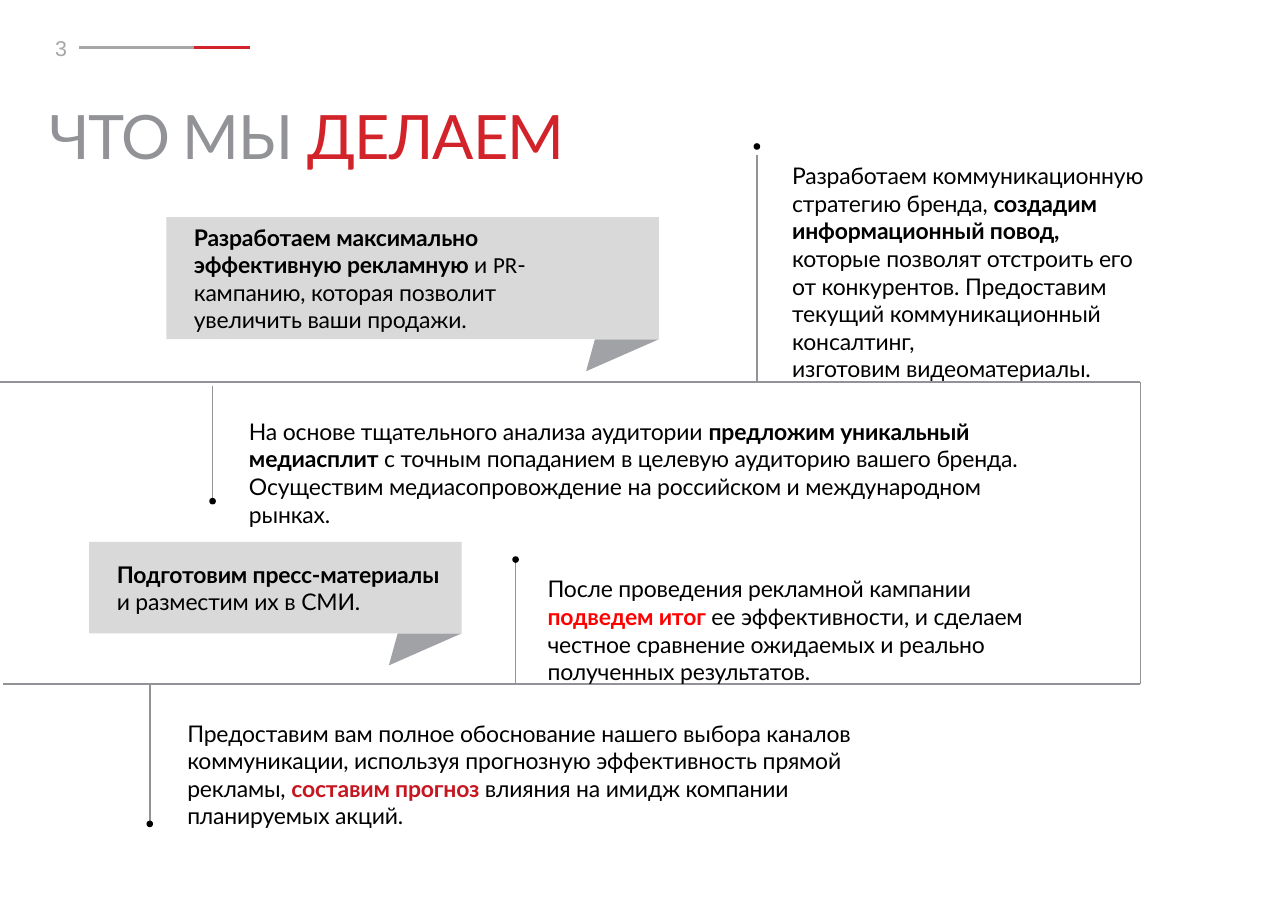
"""Builds the agency services slide: callouts, a framed route and dotted stems."""
from lxml import etree
from pptx import Presentation
from pptx.dml.color import RGBColor
from pptx.enum.shapes import MSO_CONNECTOR, MSO_SHAPE
from pptx.enum.text import MSO_ANCHOR
from pptx.oxml.ns import qn
from pptx.util import Inches, Pt

STRAIGHT = MSO_CONNECTOR.STRAIGHT
RECTANGLE, OVAL = MSO_SHAPE.RECTANGLE, MSO_SHAPE.OVAL
MIDDLE = MSO_ANCHOR.MIDDLE

BLACK = RGBColor(0x00, 0x00, 0x00)
GREY = RGBColor(0x91, 0x93, 0x96)
LIGHT_GREY = RGBColor(0xA6, 0xA6, 0xA6)
CALLOUT_GREY = RGBColor(0xD9, 0xD9, 0xD9)
TAIL_GREY = RGBColor(0xA0, 0xA2, 0xA5)
RED = RGBColor(0xD2, 0x23, 0x2A)
DARK_RED = RGBColor(0xC6, 0x16, 0x20)
BRIGHT_RED = RGBColor(0xFF, 0x00, 0x00)

BREAK = "\v"
BODY_SIZE, BODY_SPACING = 15, -0.1
DOT = 0.06

PAGE_NUMBER = [[("3", {"color": LIGHT_GREY, "font": "Arial"})]]
TITLE = [[("ЧТО МЫ ", {"color": GREY, "spacing": -0.95}),
          ("ДЕЛАЕМ", {"color": RED, "spacing": -0.5})]]

SERVICES = [
    ((7.19, 1.47, 3.35, 2.02), [
        [("Разработаем коммуникационную стратегию бренда, ", {}),
         ("создадим информационный повод,", {"bold": True}),
         (BREAK, {}),
         ("которые позволят отстроить его от конкурентов. Предоставим "
          "текущий коммуникационный консалтинг,", {})],
        [("изготовим видеоматериалы.", {})]]),
    ((2.26, 3.79, 7.25, 1.01), [
        [("На основе тщательного анализа аудитории ", {}),
         ("предложим уникальный медиасплит ", {"bold": True}),
         ("с точным попаданием в целевую аудиторию вашего бренда.", {})],
        [("Осуществим медиасопровождение на российском и международном "
          "рынках.", {})]]),
    ((4.97, 5.22, 4.65, 1.01), [
        [("После проведения рекламной кампании ", {}),
         ("подведем итог ", {"color": BRIGHT_RED, "bold": True}),
         ("ее эффективности, и сделаем честное сравнение ожидаемых "
          "и реально полученных результатов.", {})]]),
    ((1.7, 6.53, 6.67, 1.01), [
        [("Предоставим вам полное обоснование нашего выбора каналов "
          "коммуникации, используя прогнозную эффективность прямой рекламы, ", {}),
         ("составим прогноз ", {"color": DARK_RED, "bold": True}),
         ("влияния на имидж компании планируемых акций.", {})]]),
]

CALLOUTS = [
    ((1.51, 1.97, 4.47, 1.11), 0.9, [
        [("Разработаем максимально эффективную рекламную ", {"bold": True}),
         ("и ", {}),
         ("PR", {"font": "Calibri"}),
         ("-кампанию, которая позволит увеличить ваши продажи.", {})]]),
    ((0.81, 4.92, 3.38, 0.83), 0.1, [
        [("Подготовим пресс-материалы", {"bold": True})],
        [("и разместим их в СМИ.", {})]]),
]

FRAME_TOP, FRAME_BOTTOM, FRAME_RIGHT = 3.47, 6.21, 10.35
FRAME = [(0, FRAME_TOP, FRAME_RIGHT, FRAME_TOP),
         (0.03, FRAME_BOTTOM, FRAME_RIGHT, FRAME_BOTTOM),
         (FRAME_RIGHT, FRAME_TOP, FRAME_RIGHT, FRAME_BOTTOM)]
STEMS = [(6.87, FRAME_TOP, 1.41, 1.33), (1.93, 3.5, 4.57, 4.55),
         (4.68, FRAME_BOTTOM, 5.11, 5.08), (1.36, FRAME_BOTTOM, 7.5, 7.48)]
HEADER_RULE = [(0.72, 1.76, LIGHT_GREY), (1.76, 2.27, RED)]
HEADER_Y = 0.43


def write(frame, paragraphs, size=BODY_SIZE, margins=(0, 0, 0, 0)):
    frame.word_wrap = True
    (frame.margin_left, frame.margin_top,
     frame.margin_right, frame.margin_bottom) = map(Inches, margins)
    for index, pieces in enumerate(paragraphs):
        paragraph = frame.add_paragraph() if index else frame.paragraphs[0]
        paragraph.font.size = Pt(size)
        for words, style in pieces:
            if words == BREAK:
                paragraph.add_line_break()
                continue
            run = paragraph.add_run()
            run.text = words
            run.font.size = Pt(size)
            run.font.name = style.get("font", "Lato")
            run.font.bold = style.get("bold", False)
            run.font.color.rgb = style.get("color", BLACK)
            spacing = style.get("spacing", BODY_SPACING)
            run.font._element.set("spc", str(round(spacing * 100)))


def add_text(slide, box, paragraphs, size=BODY_SIZE):
    write(slide.shapes.add_textbox(*map(Inches, box)).text_frame, paragraphs, size)


def add_line(slide, ends, color=GREY, width=1):
    line = slide.shapes.add_connector(STRAIGHT, *map(Inches, ends))
    line.line.color.rgb = color
    line.line.width = Pt(width)
    etree.SubElement(line._element.spPr, qn("a:effectLst"))


def paint(shape, color):
    shape.shadow.inherit = False
    shape.fill.solid()
    shape.fill.fore_color.rgb = color
    shape.line.fill.background()


def add_stem(slide, x, start, end, dot_y):
    add_line(slide, (x, start, x, end))
    dot = (x - DOT / 2, dot_y - DOT / 2, DOT, DOT)
    paint(slide.shapes.add_shape(OVAL, *map(Inches, dot)), BLACK)


def add_callout(slide, box, right_margin, paragraphs):
    left, top, width, height = box
    right, bottom = left + width, top + height
    outline = slide.shapes.build_freeform(Inches(right), Inches(bottom))
    outline.add_line_segments(
        [(Inches(right - 0.58), Inches(bottom)),
         (Inches(right - 0.66), Inches(bottom + 0.29))], close=True)
    paint(outline.convert_to_shape(), TAIL_GREY)
    panel = slide.shapes.add_shape(RECTANGLE, *map(Inches, box))
    paint(panel, CALLOUT_GREY)
    panel.text_frame.vertical_anchor = MIDDLE
    write(panel.text_frame, paragraphs, margins=(0.25, 0.05, right_margin, 0.05))
    for paragraph in panel.text_frame.paragraphs:
        paragraph.alignment = 1


def main():
    deck = Presentation()
    deck.slide_width, deck.slide_height = Inches(11.69), Inches(8.27)
    slide = deck.slides.add_slide(deck.slide_layouts[6])

    add_text(slide, (0.5, 0.32, 0.2, 0.24), PAGE_NUMBER, 14)
    for start, end, color in HEADER_RULE:
        add_line(slide, (start, HEADER_Y, end, HEADER_Y), color, 1.75)
    add_text(slide, (0.45, 0.89, 10.8, 0.67), TITLE, 40)

    for ends in FRAME:
        add_line(slide, ends)
    for stem in STEMS:
        add_stem(slide, *stem)
    for box, paragraphs in SERVICES:
        add_text(slide, box, paragraphs)
    for callout in CALLOUTS:
        add_callout(slide, *callout)

    deck.save("out.pptx")


if __name__ == "__main__":
    main()
